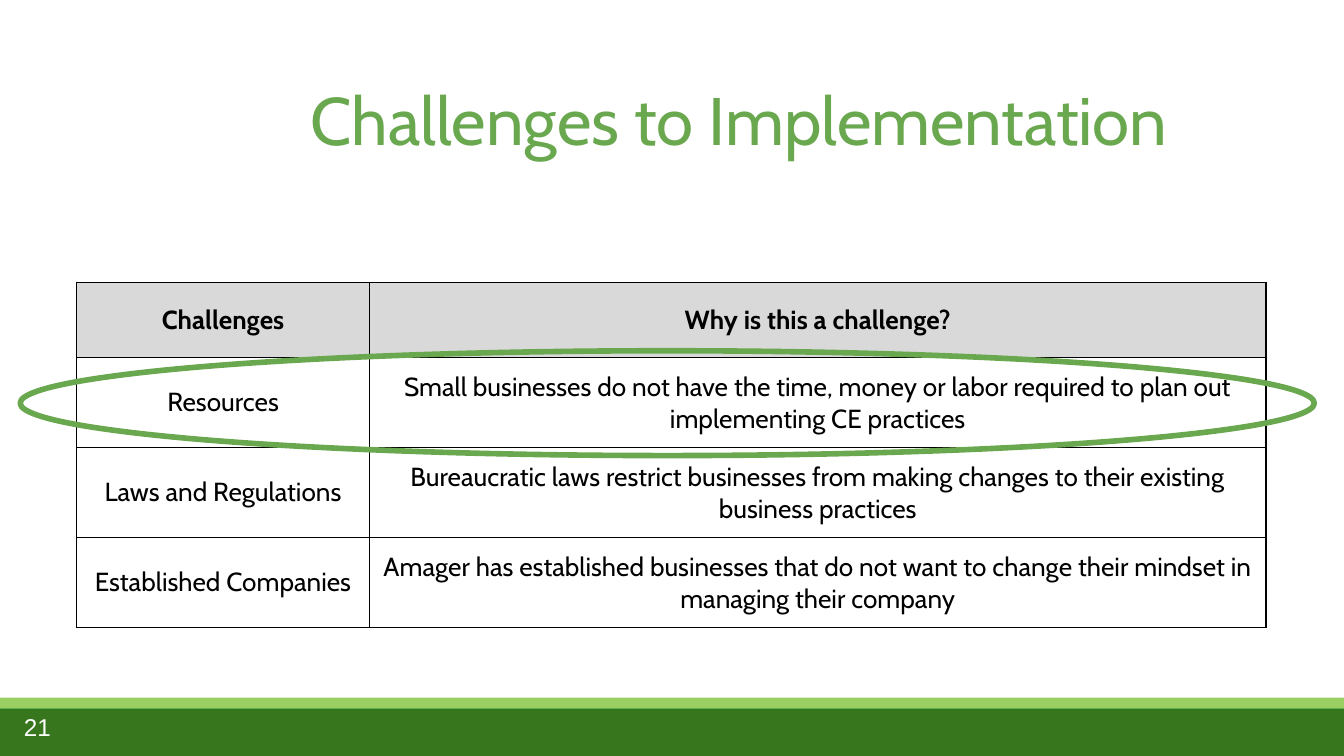
from dataclasses import dataclass

from lxml import etree
from pptx import Presentation
from pptx.dml.color import RGBColor
from pptx.enum.shapes import MSO_SHAPE
from pptx.enum.text import MSO_ANCHOR, PP_ALIGN
from pptx.oxml.ns import qn
from pptx.util import Inches, Pt


@dataclass(frozen=True)
class Theme:
    accent: str = "6AA84F"
    footer: str = "38761D"
    footer_line: str = "51B148"
    stripe: str = "9BCF63"
    header: str = "D9D9D9"
    ink: str = "000000"
    paper: str = "FFFFFF"
    font: str = "Cabin"
    number_font: str = "Arial"
    title_size: float = 36
    table_size: float = 14
    number_size: float = 13
    border: float = 0.75
    ring: float = 3
    inset: float = 0.1


class SlideBuilder:
    def __init__(self, slide, theme):
        self.slide = slide
        self.theme = theme

    def add_run(self, paragraph, text, size, color, font, bold=False):
        run = paragraph.add_run()
        run.text = text
        run.font.size = Pt(size)
        run.font.name = font
        run.font.bold = bold
        run.font.color.rgb = RGBColor.from_string(color)

    def set_insets(self, frame):
        frame.margin_left = frame.margin_right = Inches(self.theme.inset)
        frame.margin_top = frame.margin_bottom = Inches(self.theme.inset)

    def add_shape(self, kind, box, fill=None, line=None, width=0.75):
        shape = self.slide.shapes.add_shape(kind, *map(Inches, box))
        shape.shadow.inherit = False
        if fill:
            shape.fill.solid()
            shape.fill.fore_color.rgb = RGBColor.from_string(fill)
        else:
            shape.fill.background()
        if line:
            shape.line.color.rgb = RGBColor.from_string(line)
            shape.line.width = Pt(width)
        else:
            shape.line.fill.background()

    def add_text(self, box, text, size, color, font, anchor):
        frame = self.slide.shapes.add_textbox(*map(Inches, box)).text_frame
        frame.word_wrap = True
        frame.vertical_anchor = anchor
        self.set_insets(frame)
        self.add_run(frame.paragraphs[0], text, size, color, font)

    def add_borders(self, cell):
        properties = cell._tc.get_or_add_tcPr()
        for index, side in enumerate(("a:lnL", "a:lnR", "a:lnT", "a:lnB")):
            line = etree.Element(qn(side), w=str(Pt(self.theme.border)))
            fill = etree.SubElement(line, qn("a:solidFill"))
            etree.SubElement(fill, qn("a:srgbClr"), val=self.theme.ink)
            properties.insert(index, line)

    def add_table(self, box, rows, widths, heights):
        theme = self.theme
        table = self.slide.shapes.add_table(
            len(rows), len(widths), *map(Inches, box)).table
        for column, width in zip(table.columns, widths):
            column.width = Inches(width)
        for row_index, texts in enumerate(rows):
            table.rows[row_index].height = Inches(heights[row_index])
            is_header = row_index == 0
            for column_index, text in enumerate(texts):
                cell = table.cell(row_index, column_index)
                cell.vertical_anchor = MSO_ANCHOR.MIDDLE
                self.set_insets(cell)
                if is_header:
                    cell.fill.solid()
                    cell.fill.fore_color.rgb = RGBColor.from_string(theme.header)
                else:
                    cell.fill.background()
                self.add_borders(cell)
                paragraph = cell.text_frame.paragraphs[0]
                paragraph.alignment = PP_ALIGN.CENTER
                self.add_run(paragraph, text, theme.table_size, theme.ink,
                             theme.font, bold=is_header)


def main():
    # Widescreen page, 16:9
    presentation = Presentation()
    presentation.slide_width = Inches(10)
    presentation.slide_height = Inches(10) * 9 // 16
    slide = presentation.slides.add_slide(presentation.slide_layouts[6])
    theme = Theme()
    builder = SlideBuilder(slide, theme)

    # Footer bands
    builder.add_shape(MSO_SHAPE.RECTANGLE, (-0.13, 5.27, 10.2, 0.53),
                      theme.footer, theme.footer_line)
    builder.add_shape(MSO_SHAPE.RECTANGLE, (-0.13, 5.19, 10.2, 0.08), theme.stripe)

    # Title
    builder.add_text((2.21, 0.48, 7.29, 1.24), "Challenges to Implementation",
                     theme.title_size, theme.accent, theme.font, MSO_ANCHOR.TOP)

    # Challenges table
    rows = [
        ("Challenges", "Why is this a challenge?"),
        ("Resources",
         "Small businesses do not have the time, money or labor required "
         "to plan out implementing CE practices"),
        ("Laws and Regulations",
         "Bureaucratic laws restrict businesses from making changes to "
         "their existing business practices"),
        ("Established Companies",
         "Amager has established businesses that do not want to change "
         "their mindset in managing their company"),
    ]
    builder.add_table((0.57, 2.1, 8.85, 2.56), rows,
                      widths=(2.18, 6.67), heights=(0.56, 0.67, 0.67, 0.67))

    # Ring around the resources row
    builder.add_shape(MSO_SHAPE.OVAL, (0.15, 2.61, 9.63, 0.78),
                      line=theme.accent, width=theme.ring)

    # Slide number
    builder.add_text((0.08, 5.19, 0.6, 0.43), "21", theme.number_size,
                     theme.paper, theme.number_font, MSO_ANCHOR.MIDDLE)

    presentation.save("out.pptx")


if __name__ == "__main__":
    main()
